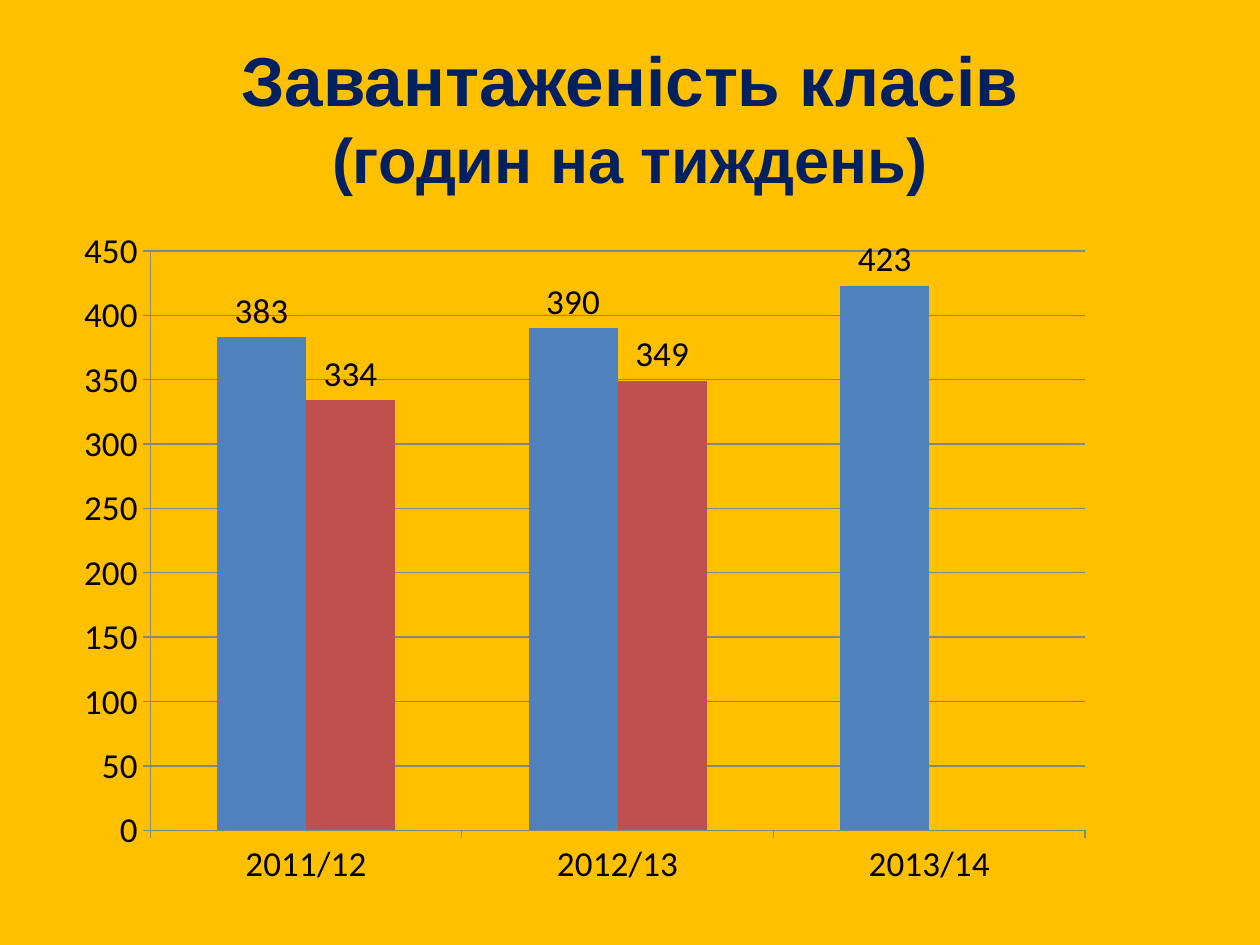
from dataclasses import dataclass

from lxml import etree
from pptx import Presentation
from pptx import util as u
from pptx.chart.data import CategoryChartData
from pptx.dml.color import RGBColor
from pptx.enum import chart as ch, text
from pptx.oxml.ns import qn

PX = 914400 / 126


@dataclass(frozen=True)
class Theme:
    background: str = "FFC000"
    heading: str = "002060"
    ink: str = "000000"
    grid: str = "868686"
    bars: tuple = ("4F81BD", "C0504D")
    heading_font: str = "Arial"
    chart_font: str = "Calibri"
    heading_size: float = 39.6
    subheading_size: float = 36
    chart_size: float = 20
    line_width: float = 0.75


class Deck:
    """Builds styled elements on the current slide, with lengths in px."""

    def __init__(self, theme, width, height):
        self.theme = theme
        self.prs = Presentation()
        self.prs.slide_width, self.prs.slide_height = self.emu(width, height)
        self.s = None

    def emu(self, *lengths):
        return [u.Emu(round(n * PX)) for n in lengths]

    def color(self, value):
        return RGBColor.from_string(value)

    def add_slide(self):
        self.s = self.prs.slides.add_slide(self.prs.slide_layouts[5])
        fill = self.s.background.fill
        fill.solid()
        fill.fore_color.rgb = self.color(self.theme.background)

    def title(self, heading, subheading, box):
        sp = self.s.shapes.title
        sp.left, sp.top, sp.width, sp.height = self.emu(*box)
        tf = sp.text_frame
        tf.auto_size = text.MSO_AUTO_SIZE.NONE
        tf.vertical_anchor = text.MSO_ANCHOR.MIDDLE
        p = tf.paragraphs[0]
        p.alignment = text.PP_ALIGN.CENTER
        first = p.add_run()
        p.add_line_break()
        second = p.add_run()
        t = self.theme
        lines = ((first, heading, t.heading_size),
                 (second, subheading, t.subheading_size))
        for r, words, size in lines:
            r.text = words
            r.font.size = u.Pt(size)
            r.font.name = t.heading_font
            r.font.bold = True
            r.font.color.rgb = self.color(t.heading)

    def column_chart(self, categories, series, box, plot_area):
        t = self.theme
        data = CategoryChartData()
        data.categories = categories
        for name, values in series.items():
            data.add_series(name, values)
        chart = self.s.shapes.add_chart(
            ch.XL_CHART_TYPE.COLUMN_CLUSTERED, *self.emu(*box), data).chart
        chart.has_legend = False
        chart.has_title = False
        chart.font.name = t.chart_font
        chart.font.size = u.Pt(t.chart_size)
        chart.font.color.rgb = self.color(t.ink)
        plot = chart.plots[0]
        plot.gap_width, plot.overlap = 150, 0
        plot.vary_by_categories = False
        for bars, color in zip(plot.series, t.bars):
            bars.format.fill.solid()
            bars.format.fill.fore_color.rgb = self.color(color)
            labels = bars.data_labels
            labels.show_value = True
            labels.position = ch.XL_LABEL_POSITION.OUTSIDE_END
            labels.font.size = u.Pt(t.chart_size)
        value_axis = chart.value_axis
        value_axis.minimum_scale, value_axis.maximum_scale = 0, 450
        value_axis.major_unit = 50
        value_axis.has_major_gridlines = True
        for axis in (chart.category_axis, value_axis):
            axis.major_tick_mark = ch.XL_TICK_MARK.OUTSIDE
            axis.tick_labels.font.size = u.Pt(t.chart_size)
            self.line(axis.format.line)
        self.line(value_axis.major_gridlines.format.line)
        self.plot_layout(chart, box, plot_area)

    def line(self, line):
        line.color.rgb = self.color(self.theme.grid)
        line.width = u.Pt(self.theme.line_width)

    def plot_layout(self, chart, box, plot_area):
        left, top, width, height = box
        x, y, w, h = plot_area
        area = chart.plots[0]._element.getparent()
        for old in area.findall(qn("c:layout")):
            area.remove(old)
        layout = etree.Element(qn("c:layout"))
        manual = etree.SubElement(layout, qn("c:manualLayout"))
        settings = {"layoutTarget": "inner", "xMode": "edge", "yMode": "edge",
                    "x": (x - left) / width, "y": (y - top) / height,
                    "w": w / width, "h": h / height}
        for name, value in settings.items():
            etree.SubElement(manual, qn(f"c:{name}")).set("val", str(value))
        area.insert(0, layout)


def main():
    deck = Deck(Theme(), 1260, 945)
    deck.add_slide()
    deck.title("Завантаженість класів", "(годин на тиждень)",
               (63, 38, 1134, 158))
    deck.column_chart(
        ("2011/12", "2012/13", "2013/14"),
        {"Series 1": (383, 390, 423), "Series 2": (334, 349, None)},
        box=(84, 224, 1103, 662), plot_area=(149, 251, 936, 580))
    deck.prs.save("out.pptx")


if __name__ == "__main__":
    main()
